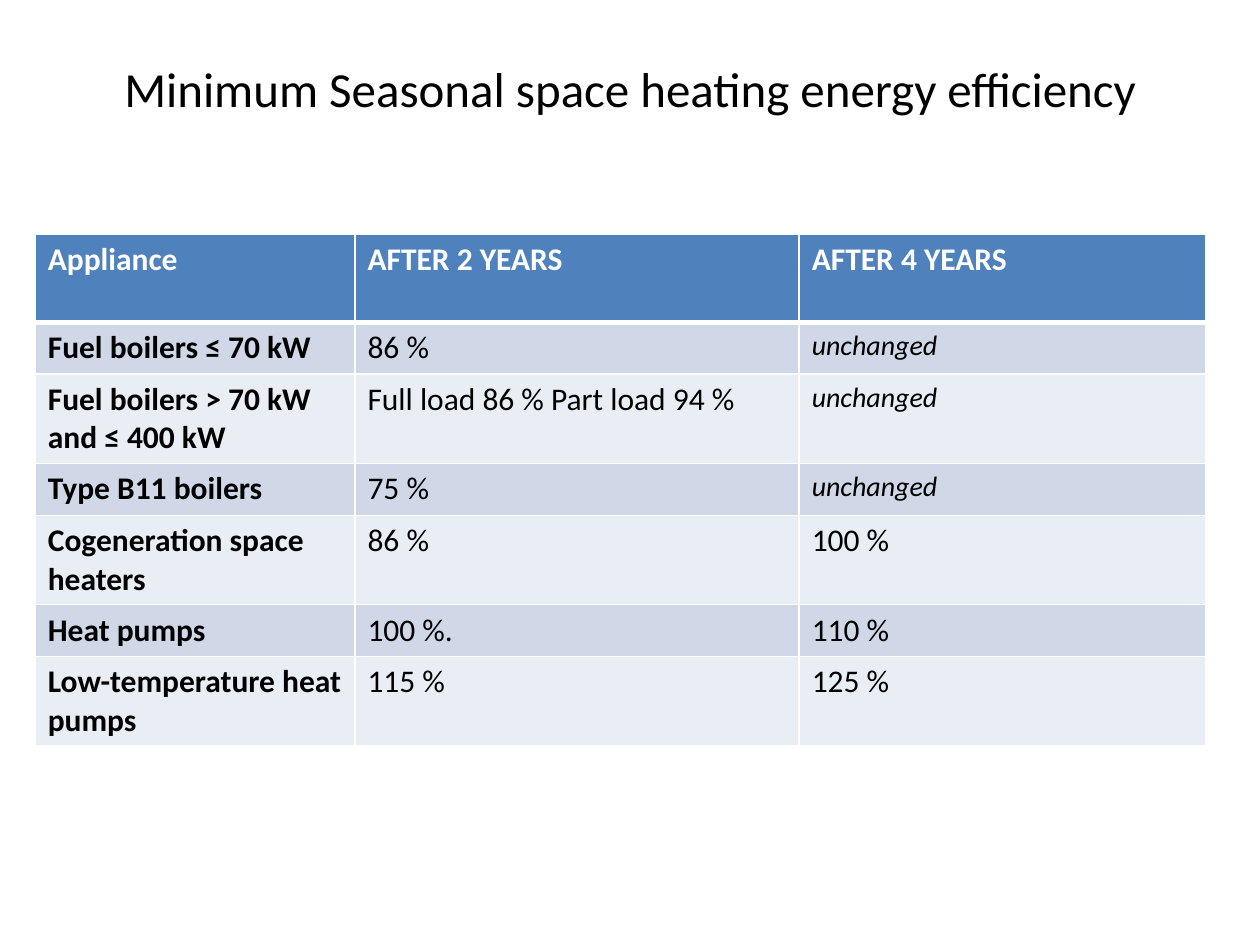
from lxml import etree
from pptx import Presentation
from pptx import util as u
from pptx.dml.color import RGBColor
from pptx.enum import text
from pptx.oxml.ns import qn

COLORS = {
    "ink": "000000",
    "paper": "FFFFFF",
    "header": "4F81BD",
    "band_dark": "D0D8E8",
    "band_light": "E9EDF4",
}
FONT = "Calibri"
HEADINGS = ("Appliance", "AFTER 2 YEARS", "AFTER 4 YEARS")
UNCHANGED = "unchanged"
EFFICIENCIES = (
    ("Fuel boilers ≤ 70 kW", "86 %", UNCHANGED),
    ("Fuel boilers > 70 kW and ≤ 400 kW", "Full load 86 % Part load 94 %", UNCHANGED),
    ("Type B11 boilers", "75 %", UNCHANGED),
    ("Cogeneration space heaters", "86 %", "100 %"),
    ("Heat pumps", "100 %.", "110 %"),
    ("Low-temperature heat pumps", "115 %", "125 %"),
)
COLUMN_SHARES = (2.54, 3.53, 3.23)
HEADER_HEIGHT = 0.7
ROW_HEIGHTS = (0.41, 0.71)


def color(name):
    return RGBColor.from_string(COLORS[name])


def add_run(paragraph, wording, size, ink="ink", bold=False, italic=False):
    run = paragraph.add_run()
    run.text = wording
    run.font.name = FONT
    run.font.size = u.Pt(size)
    run.font.bold = bold
    run.font.italic = italic
    run.font.color.rgb = color(ink)


def add_borders(cell, bottom_width):
    properties = cell._tc.get_or_add_tcPr()
    for side in ("L", "R", "T", "B"):
        width = bottom_width if side == "B" else 1
        line = etree.SubElement(properties, qn(f"a:ln{side}"), w=str(u.Pt(width)))
        fill = etree.SubElement(line, qn("a:solidFill"))
        etree.SubElement(fill, qn("a:srgbClr"), val=COLORS["paper"])


def fill_cell(cell, wording, fill, bottom_width=1, **style):
    add_borders(cell, bottom_width)
    cell.fill.solid()
    cell.fill.fore_color.rgb = color(fill)
    add_run(cell.text_frame.paragraphs[0], wording, **style)


def add_title(slide, left, top, width, height):
    frame = slide.shapes.add_textbox(left, top, width, height).text_frame
    frame.word_wrap = True
    frame.vertical_anchor = text.MSO_ANCHOR.MIDDLE
    frame.margin_bottom = u.Inches(0.5)
    heading = frame.paragraphs[0]
    heading.alignment = text.PP_ALIGN.CENTER
    add_run(heading, "Minimum Seasonal space heating energy efficiency", 28)


def add_efficiency_table(slide, left, top, width, height):
    table = slide.shapes.add_table(
        len(EFFICIENCIES) + 1, len(HEADINGS), left, top, width, height
    ).table
    for column, share in zip(table.columns, COLUMN_SHARES):
        column.width = int(width * share / sum(COLUMN_SHARES))

    table.rows[0].height = u.Inches(HEADER_HEIGHT)
    for column, heading in enumerate(HEADINGS):
        fill_cell(table.cell(0, column), heading, "header", bottom_width=3,
                  size=18, ink="paper", bold=True)

    for row, values in enumerate(EFFICIENCIES, start=1):
        band = "band_dark" if row % 2 else "band_light"
        table.rows[row].height = u.Inches(ROW_HEIGHTS[(row - 1) % 2])
        for column, value in enumerate(values):
            unchanged = value == UNCHANGED
            fill_cell(table.cell(row, column), value, band,
                      size=16 if unchanged else 18,
                      bold=column == 0, italic=unchanged)


def main():
    deck = Presentation()
    deck.slide_width, deck.slide_height = u.Inches(10), u.Inches(7.5)
    slide = deck.slides.add_slide(deck.slide_layouts[6])
    add_title(slide, u.Inches(0.5), u.Inches(0.3), u.Inches(9), u.Inches(1.25))
    add_efficiency_table(slide, u.Inches(0.28), u.Inches(1.86),
                         u.Inches(9.29), u.Inches(4.06))
    deck.save("out.pptx")


if __name__ == "__main__":
    main()
